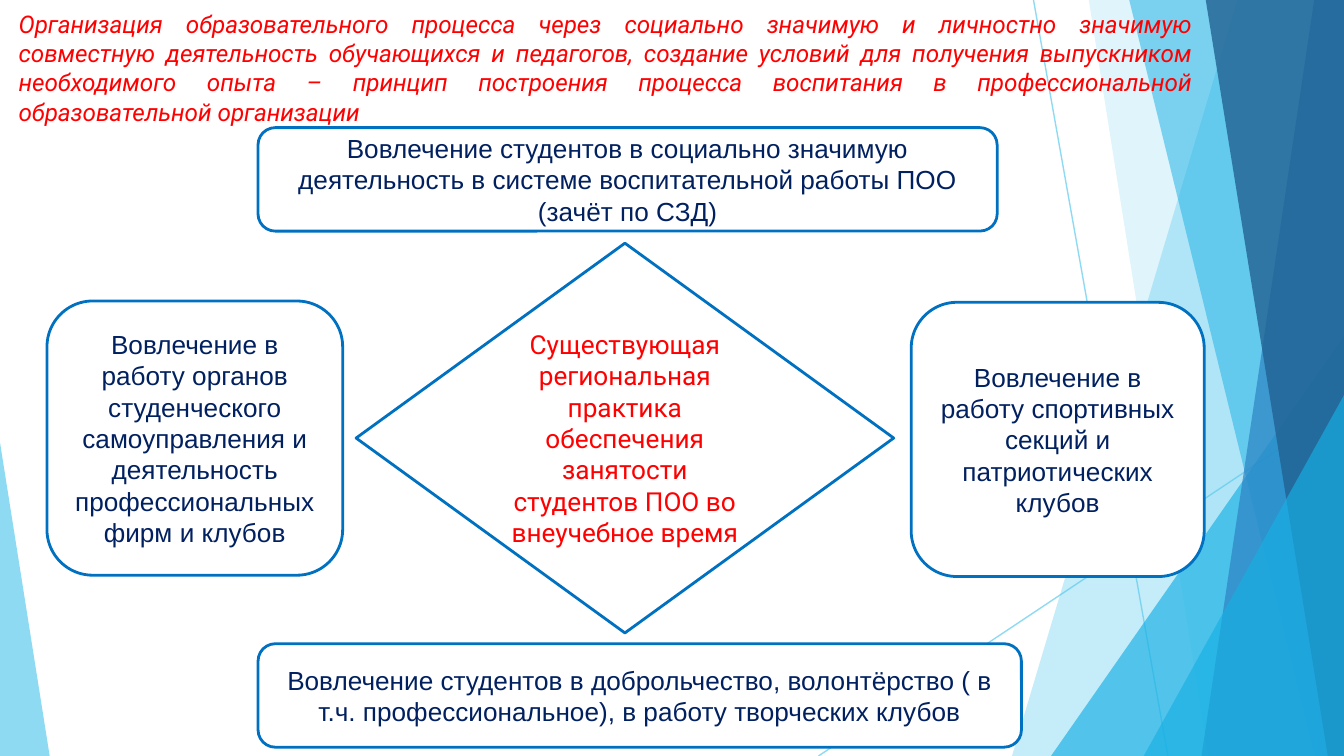
from lxml import etree
from pptx import Presentation
from pptx.dml.color import RGBColor
from pptx.enum.shapes import MSO_CONNECTOR, MSO_SHAPE
from pptx.enum.text import MSO_ANCHOR, PP_ALIGN
from pptx.oxml.ns import qn
from pptx.util import Inches, Pt

STRAIGHT = MSO_CONNECTOR.STRAIGHT
TRIANGLE = MSO_SHAPE.ISOSCELES_TRIANGLE
DIAMOND, ROUNDED = MSO_SHAPE.DIAMOND, MSO_SHAPE.ROUNDED_RECTANGLE
MIDDLE, TOP = MSO_ANCHOR.MIDDLE, MSO_ANCHOR.TOP
CENTER, JUSTIFY = PP_ALIGN.CENTER, PP_ALIGN.JUSTIFY

WIDTH = 10
HEIGHT = WIDTH * 9 / 16
COLORS = {
    "white": "FFFFFF", "outline": "0070C0", "navy": "002060", "red": "FF0000",
    "light": "5FCBEF", "bright": "17B0E4", "medium": "2E83C3", "deep": "226292",
}

# Content
TITLE = ("Организация образовательного процесса через социально значимую и личностно "
         "значимую совместную деятельность обучающихся и педагогов, создание условий для "
         "получения выпускником необходимого опыта – принцип построения процесса "
         "воспитания в профессиональной образовательной организации ")
TITLE_BOX = (0.04, 0.02, 8.92, 0.76)

TITLE_FORMAT = {"name": "Roboto", "size": Pt(13), "italic": True}
CENTER_FORMAT = {"name": "Roboto", "size": Pt(14)}
BOX_FORMAT = {"name": "Arial", "size": Pt(14)}

# Diagram: preset, (left, top, width, height), paragraphs, text colour, format
DIAGRAM = [
    (DIAMOND, (2.65, 1.81, 4, 2.9),
     ["Существующая региональная практика обеспечения занятости студентов ПОО "
      "во внеучебное время"], "red", CENTER_FORMAT),
    (ROUNDED, (1.92, 0.95, 5.5, 0.77),
     ["Вовлечение студентов в социально значимую деятельность в системе "
      "воспитательной работы ПОО", "(зачёт по СЗД)"], "navy", BOX_FORMAT),
    (ROUNDED, (1.92, 4.79, 5.68, 0.77),
     ["Вовлечение студентов в доброльчество, волонтёрство ( в т.ч. "
      "профессиональное), в работу творческих клубов"], "navy", BOX_FORMAT),
    (ROUNDED, (0.35, 2.24, 2.2, 2.04),
     ["Вовлечение в работу органов студенческого самоуправления и",
      "деятельность профессиональных фирм и клубов"], "navy", BOX_FORMAT),
    (ROUNDED, (6.78, 2.25, 2.18, 2.04),
     ["Вовлечение в работу спортивных секций и патриотических клубов"],
     "navy", BOX_FORMAT),
]

# Background: thin lines, then bands (top left x, bottom left x) that reach the
# right edge and triangles (left, top, width, apex position), back to front
LINES = [((7.69, 0), (8.69, HEIGHT)), ((WIDTH, 3.02), (6.09, HEIGHT))]
FACETS = [
    ("band", (9.21, 7.53), "light", 36),
    ("band", (8.1, 8.99), "light", 20),
    ("triangle", (7.82, 2.5, 2.18, 1), "bright", 66),
    ("band", (8.4, 9.78), "bright", 50),
    ("band", (9.78, 8.94), "medium", 70),
    ("band", (8.97, 9.88), "deep", 80),
    ("triangle", (8.51, 2.94, 1.49, 1), "bright", 66),
    ("triangle", (0, 3.29, 0.37, 0), "light", 70),
]
BAND_TOP = -0.01


def rgb(name):
    return RGBColor.from_string(COLORS[name])


def set_opacity(fill_parent, percent):
    color = fill_parent.find(".//" + qn("a:srgbClr"))
    etree.SubElement(color, qn("a:alpha"), val=str(percent * 1000))


def paint(shape, color, opacity=None):
    shape.shadow.inherit = False
    shape.fill.solid()
    shape.fill.fore_color.rgb = rgb(color)
    if opacity is not None:
        set_opacity(shape.element.spPr, opacity)
        shape.line.fill.background()


def write(shape, paragraphs, color, text_format, alignment, anchor):
    frame = shape.text_frame
    frame.word_wrap = True
    frame.vertical_anchor = anchor
    for index, text in enumerate(paragraphs):
        paragraph = frame.add_paragraph() if index else frame.paragraphs[0]
        paragraph.alignment = alignment
        run = paragraph.add_run()
        run.text = text
        run.font.color.rgb = rgb(color)
        for attribute, value in text_format.items():
            setattr(run.font, attribute, value)


def add_line(shapes, start, end):
    line = shapes.add_connector(STRAIGHT, *map(Inches, start + end))
    line.line.color.rgb = rgb("light")
    line.line.width = Pt(0.75)
    properties = line.element.spPr
    set_opacity(properties, 70)
    etree.SubElement(properties, qn("a:effectLst"))


def add_band(shapes, top_left, bottom_left):
    corners = [(top_left, BAND_TOP), (WIDTH, BAND_TOP),
               (WIDTH, HEIGHT), (bottom_left, HEIGHT)]
    points = [(Inches(x), Inches(y)) for x, y in corners]
    builder = shapes.build_freeform(*points[0])
    builder.add_line_segments(points[1:], close=True)
    return builder.convert_to_shape()


def add_triangle(shapes, left, top, width, apex):
    box = (left, top, width, HEIGHT - top)
    triangle = shapes.add_shape(TRIANGLE, *map(Inches, box))
    triangle.adjustments[0] = apex
    return triangle


def main():
    presentation = Presentation()
    presentation.slide_width = Inches(WIDTH)
    presentation.slide_height = Inches(HEIGHT)
    slide = presentation.slides.add_slide(presentation.slide_layouts[6])
    shapes = slide.shapes

    # Background facets
    for start, end in LINES:
        add_line(shapes, start, end)
    builders = {"band": add_band, "triangle": add_triangle}
    for kind, geometry, color, opacity in FACETS:
        paint(builders[kind](shapes, *geometry), color, opacity)

    # Diamond and the boxes around it
    for preset, box, paragraphs, color, text_format in DIAGRAM:
        shape = shapes.add_shape(preset, *map(Inches, box))
        paint(shape, "white")
        shape.line.color.rgb = rgb("outline")
        shape.line.width = Pt(1.5)
        write(shape, paragraphs, color, text_format, CENTER, MIDDLE)

    # Title
    title = shapes.add_textbox(*map(Inches, TITLE_BOX))
    write(title, [TITLE], "red", TITLE_FORMAT, JUSTIFY, TOP)

    presentation.save("out.pptx")


if __name__ == "__main__":
    main()
